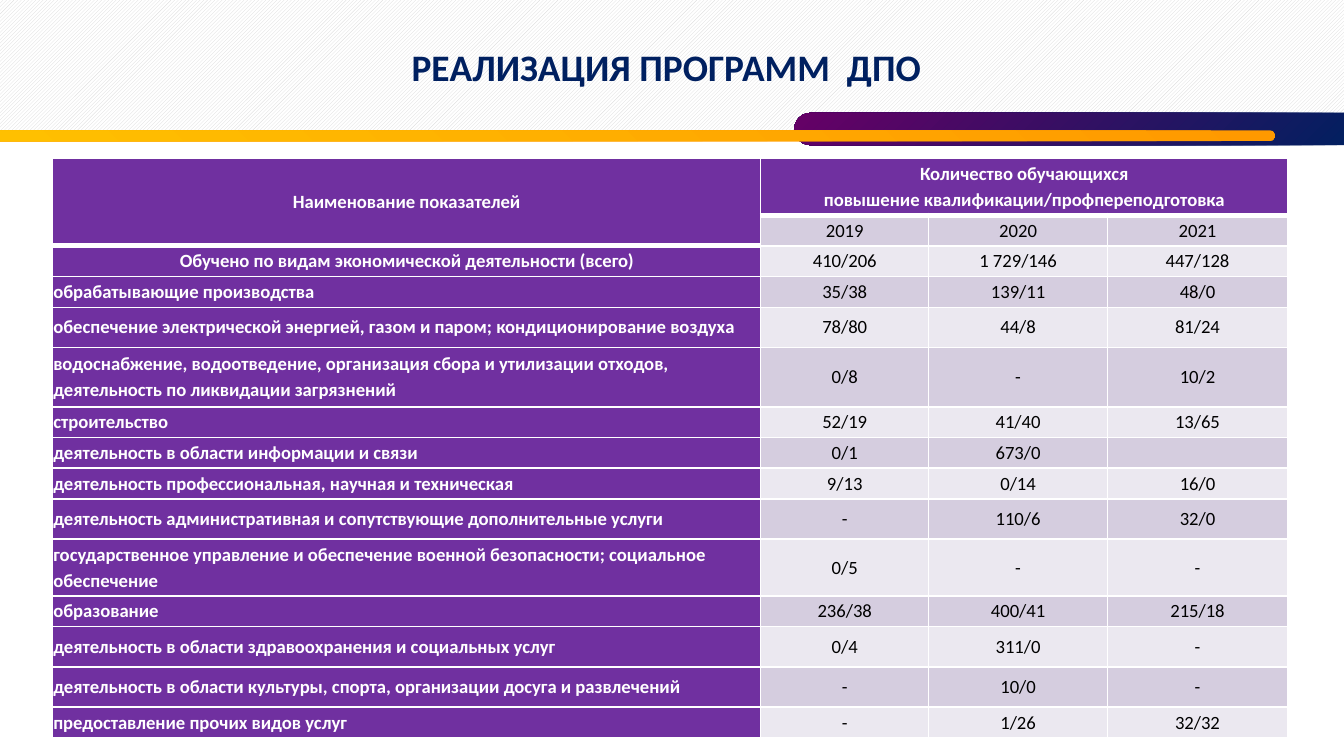
"""Build the slide on enrolment in continuing education programmes."""
import dataclasses

import lxml.etree
import pptx
import pptx.dml.color
import pptx.enum.dml
import pptx.enum.shapes
import pptx.enum.text
import pptx.oxml.ns
import pptx.util

Inches = pptx.util.Inches
Pt = pptx.util.Pt
RGB = pptx.dml.color.RGBColor.from_string
Align = pptx.enum.text.PP_ALIGN
Shape = pptx.enum.shapes.MSO_SHAPE
MIDDLE = pptx.enum.text.MSO_ANCHOR.MIDDLE
qn = pptx.oxml.ns.qn


@dataclasses.dataclass(frozen=True)
class Theme:
    font: str = "Calibri"
    title_size: int = 20
    table_size: int = 10
    title: str = "002060"
    hatch: str = "D9D9D9"
    white: str = "FFFFFF"
    black: str = "000000"
    label: str = "7030A0"
    bands: tuple = ("EBE8F0", "D5CDDF")
    tab: tuple = ("002060", "660066")
    stripe: tuple = ("FF9900", "FFC000")
    border: int = 1
    header_border: int = 3
    cell_inset: float = 0.5


THEME = Theme()
SLIDE_WIDTH = 10
SLIDE_HEIGHT = SLIDE_WIDTH * 9 / 16
TITLE = "РЕАЛИЗАЦИЯ ПРОГРАММ  ДПО "
HEADING = "Наименование показателей"
GROUP = "Количество обучающихся\nповышение квалификации/профпереподготовка"
ROWS = [
    (0.2, HEADING, GROUP, "", ""),
    (0.17, "", "2019", "2020", "2021"),
    (0.21, "Обучено по видам экономической деятельности (всего)", "410/206", "1 729/146", "447/128"),
    (0.17, "обрабатывающие производства", "35/38", "139/11", "48/0"),
    (0.3, "обеспечение электрической энергией, газом и паром; кондиционирование воздуха",
     "78/80", "44/8", "81/24"),
    (0.44, "водоснабжение, водоотведение, организация сбора и утилизации отходов, "
     "деятельность по ликвидации загрязнений", "0/8", "-", "10/2"),
    (0.17, "строительство", "52/19", "41/40", "13/65"),
    (0.17, "деятельность в области информации и связи", "0/1", "673/0", ""),
    (0.17, "деятельность профессиональная, научная и техническая", "9/13", "0/14", "16/0"),
    (0.3, "деятельность административная и сопутствующие дополнительные услуги",
     "-", "110/6", "32/0"),
    (0.3, "государственное управление и обеспечение военной безопасности; "
     "социальное обеспечение", "0/5", "-", "-"),
    (0.17, "образование", "236/38", "400/41", "215/18"),
    (0.3, "деятельность в области здравоохранения и социальных услуг", "0/4", "311/0", "-"),
    (0.3, "деятельность в области культуры, спорта, организации досуга и развлечений",
     "-", "10/0", "-"),
    (0.17, "предоставление прочих видов услуг", "-", "1/26", "32/32"),
]
COLUMNS = (5.27, 1.25, 1.33, 1.34)
TOTAL_ROW = 2


def apply_format(target, values):
    for name, value in values.items():
        setattr(target, name, value)


def write_text(frame, text, size, colour, bold, align, spacing=1.0):
    frame.text = text
    for paragraph in frame.paragraphs:
        apply_format(paragraph, {"alignment": align, "line_spacing": spacing})
        for run in paragraph.runs:
            apply_format(run.font, {"name": THEME.font, "size": Pt(size), "bold": bold})
            run.font.color.rgb = RGB(colour)
        if not paragraph.runs:
            lxml.etree.SubElement(paragraph._p, qn("a:endParaRPr"), sz=str(size * 100))


def add_plain_shape(slide, kind, box):
    shape = slide.shapes.add_shape(kind, *map(Inches, box))
    shape.shadow.inherit = False
    shape.line.fill.background()
    return shape


def add_hatched_band(slide, box):
    band = add_plain_shape(slide, Shape.RECTANGLE, box)
    band.fill.patterned()
    band.fill.pattern = pptx.enum.dml.MSO_PATTERN.LIGHT_UPWARD_DIAGONAL
    band.fill.fore_color.rgb = RGB(THEME.hatch)
    band.fill.back_color.rgb = RGB(THEME.white)


def add_gradient_bar(slide, box, colours):
    bar = add_plain_shape(slide, Shape.ROUNDED_RECTANGLE, box)
    bar.adjustments[0] = 0.5
    bar.fill.gradient()
    bar.fill.gradient_angle = 315
    for stop, colour in zip(bar.fill.gradient_stops, colours):
        stop.color.rgb = RGB(colour)
    return bar


def add_title(slide, box):
    title = slide.shapes.add_textbox(*map(Inches, box))
    apply_format(title.text_frame, {"word_wrap": True, "vertical_anchor": MIDDLE})
    write_text(title.text_frame, TITLE, THEME.title_size, THEME.title, True, Align.CENTER)


def set_borders(cell, widths):
    properties = cell._tc.get_or_add_tcPr()
    for position, (side, width) in enumerate(widths.items()):
        line = lxml.etree.Element(qn(f"a:ln{side}"), w=str(Pt(width)))
        fill = lxml.etree.SubElement(line, qn("a:solidFill"))
        lxml.etree.SubElement(fill, qn("a:srgbClr"), val=THEME.white)
        properties.insert(position, line)


def format_cell(cell, row, column, text):
    is_label = column == 0 or row == 0
    header_end = 1 if column == 0 else 0
    left = column == 0 and row > TOTAL_ROW
    inset = Pt(THEME.cell_inset)
    apply_format(cell, {
        "vertical_anchor": MIDDLE,
        "margin_left": inset, "margin_right": inset,
        "margin_top": inset, "margin_bottom": Inches(0.03),
    })
    cell.fill.solid()
    cell.fill.fore_color.rgb = RGB(THEME.label if is_label else THEME.bands[row % 2])
    write_text(cell.text_frame, text, THEME.table_size,
               THEME.white if is_label else THEME.black, is_label,
               Align.LEFT if left else Align.CENTER, 1.15)
    set_borders(cell, {
        "L": THEME.border,
        "R": THEME.border,
        "T": THEME.header_border if row == header_end + 1 else THEME.border,
        "B": THEME.header_border if row <= header_end else THEME.border,
    })


def add_enrolment_table(slide, left, top):
    size = sum(COLUMNS), sum(height for height, *_ in ROWS)
    table = slide.shapes.add_table(
        len(ROWS), len(COLUMNS), *map(Inches, (left, top, *size))).table
    for column, width in zip(table.columns, COLUMNS):
        column.width = Inches(width)
    for row, (height, *texts) in enumerate(ROWS):
        table.rows[row].height = Inches(height)
        for column, text in enumerate(texts):
            format_cell(table.cell(row, column), row, column, text)
    table.cell(0, 0).merge(table.cell(1, 0))
    table.cell(0, 1).merge(table.cell(0, 3))


def main():
    deck = pptx.Presentation()
    apply_format(deck, {
        "slide_width": Inches(SLIDE_WIDTH), "slide_height": Inches(SLIDE_HEIGHT)})
    slide = deck.slides.add_slide(deck.slide_layouts[6])
    add_hatched_band(slide, (0, 0, SLIDE_WIDTH, 0.98))
    tab = add_gradient_bar(slide, (5.91, 0.84, 4.21, 0.24), THEME.tab)
    tab.rotation = 180
    stripe = add_gradient_bar(slide, (-0.08, 0.97, 9.57, 0.08), THEME.stripe)
    stripe._element.spPr.xfrm.set("flipH", "1")
    add_title(slide, (0.13, 0.11, 9.72, 0.77))
    add_enrolment_table(slide, 0.39, 1.18)
    deck.save("out.pptx")


if __name__ == "__main__":
    main()
